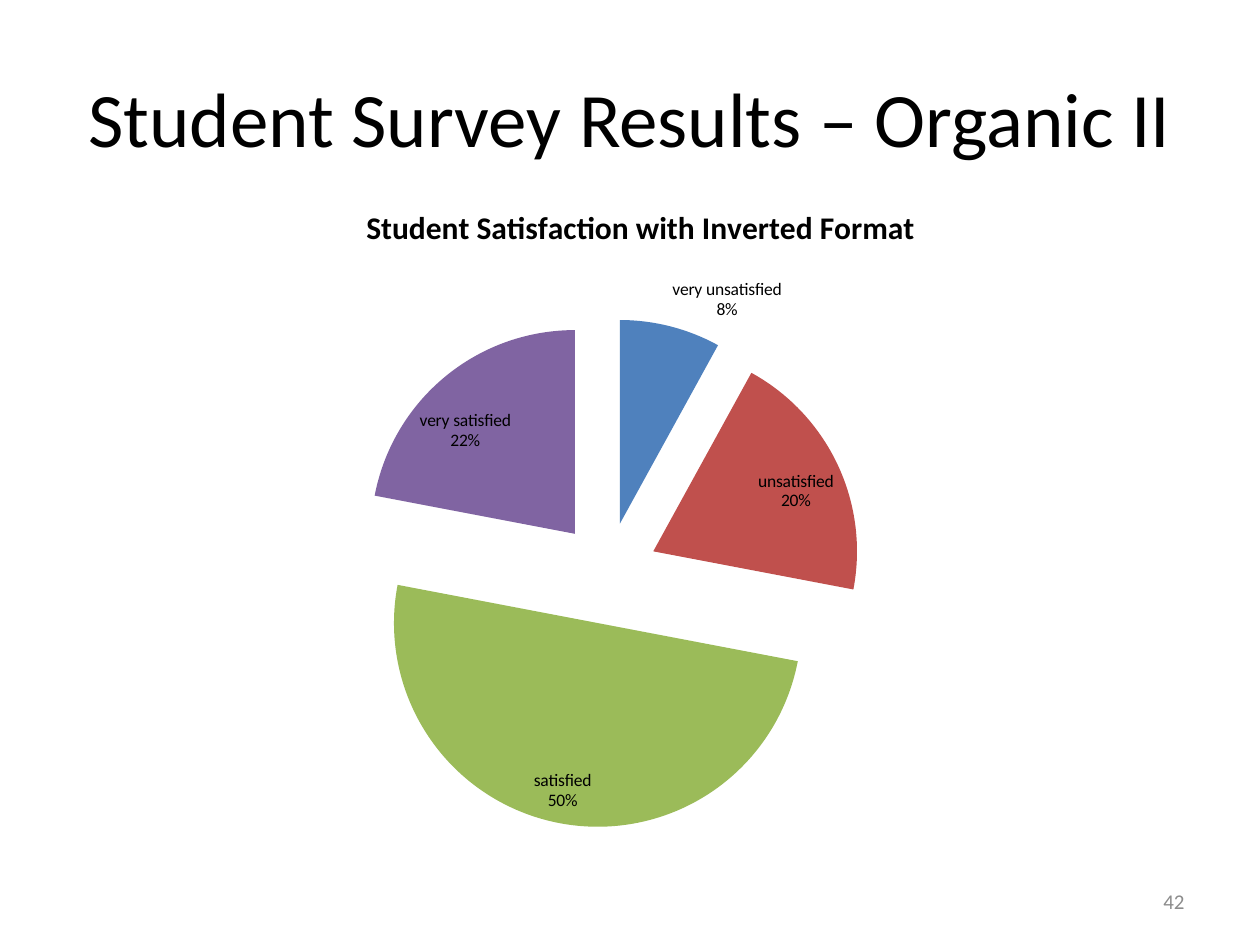
import pptx
import pptx.chart.data
import pptx.dml.color
import pptx.enum.chart
import pptx.enum.text
import pptx.oxml
import pptx.oxml.ns
import pptx.util

WIDTH, HEIGHT = pptx.util.Inches(10), pptx.util.Inches(7.5)
FONT = "Calibri"
COLORS = {
    "text": "000000",
    "number": "8C8C8C",
    "very unsatisfied": "4F81BD",
    "unsatisfied": "C0504D",
    "satisfied": "9BBB59",
    "very satisfied": "8064A2",
}
SATISFACTION = {
    "very unsatisfied": 8,
    "unsatisfied": 20,
    "satisfied": 50,
    "very satisfied": 22,
}
EXPLOSION = 25
# Shares of the chart's box: left, top, width, height
PIE_AREA = {"x": 0.24, "y": 0.21, "w": 0.46, "h": 0.77}


def share_box(left, top, width, height):
    """Turn shares of the slide's size into lengths."""
    return (int(left * WIDTH), int(top * HEIGHT),
            int(width * WIDTH), int(height * HEIGHT))


def style_font(font, size, color="text", bold=False):
    font.name = FONT
    font.size = pptx.util.Pt(size)
    font.bold = bold
    font.color.rgb = pptx.dml.color.RGBColor.from_string(COLORS[color])


def fill_text(holder, box, text, size, color, align):
    holder.left, holder.top, holder.width, holder.height = box
    frame = holder.text_frame
    frame.word_wrap = True
    frame.vertical_anchor = pptx.enum.text.MSO_ANCHOR.MIDDLE
    frame.text = text
    paragraph = frame.paragraphs[0]
    paragraph.alignment = align
    style_font(paragraph.font, size, color)


def explode(series, percent):
    explosion = pptx.oxml.parse_xml(
        f'<c:explosion {pptx.oxml.ns.nsdecls("c")} val="{percent}"/>')
    series._element.find(pptx.oxml.ns.qn("c:tx")).addnext(explosion)


def place_pie(chart, area):
    """Fix the inner plot area at shares of the chart's box."""
    plot_area = chart._chartSpace.chart.plotArea
    for automatic in plot_area.findall(pptx.oxml.ns.qn("c:layout")):
        plot_area.remove(automatic)
    shares = "".join(f'<c:{side} val="{share}"/>' for side, share in area.items())
    plot_area.insert(0, pptx.oxml.parse_xml(
        f'<c:layout {pptx.oxml.ns.nsdecls("c")}><c:manualLayout>'
        '<c:layoutTarget val="inner"/><c:xMode val="edge"/><c:yMode val="edge"/>'
        f'{shares}</c:manualLayout></c:layout>'))


def add_satisfaction_pie(slide, box):
    survey = pptx.chart.data.CategoryChartData()
    survey.categories = list(SATISFACTION)
    survey.add_series("Series 1", list(SATISFACTION.values()))
    chart = slide.shapes.add_chart(
        pptx.enum.chart.XL_CHART_TYPE.PIE, *box, survey).chart
    style_font(chart.font, 10)
    chart.has_legend = False
    chart.has_title = True
    heading = chart.chart_title.text_frame
    heading.text = "Student Satisfaction with Inverted Format"
    style_font(heading.paragraphs[0].font, 18, bold=True)
    chart.chart_title.include_in_layout = False
    place_pie(chart, PIE_AREA)

    pie = chart.plots[0]
    pie.vary_by_categories = True
    answers = pie.series[0]
    explode(answers, EXPLOSION)
    for index, answer in enumerate(SATISFACTION):
        slice_format = answers.points[index].format
        slice_format.fill.solid()
        slice_format.fill.fore_color.rgb = pptx.dml.color.RGBColor.from_string(
            COLORS[answer])
        slice_format.line.fill.background()

    labels = answers.data_labels
    labels.show_value = False
    labels.show_category_name = True
    labels.show_percentage = True
    labels.position = pptx.enum.chart.XL_LABEL_POSITION.BEST_FIT
    style_font(labels.font, 10)


def build_survey_slide(deck):
    slide = deck.slides.add_slide(deck.slide_layouts.get_by_name("Title Only"))
    align = pptx.enum.text.PP_ALIGN
    fill_text(slide.shapes.title, share_box(0.05, 0.04, 0.9, 0.167),
              "Student Survey Results – Organic II", 44, "text", align.CENTER)
    add_satisfaction_pie(slide, share_box(0.067, 0.19, 0.883, 0.7))
    number_box = share_box(0.717, 0.927, 0.233, 0.053)
    fill_text(slide.shapes.add_textbox(*number_box), number_box,
              "42", 12, "number", align.RIGHT)


def main():
    deck = pptx.Presentation()
    deck.slide_width, deck.slide_height = WIDTH, HEIGHT
    build_survey_slide(deck)
    deck.save("out.pptx")


if __name__ == "__main__":
    main()
